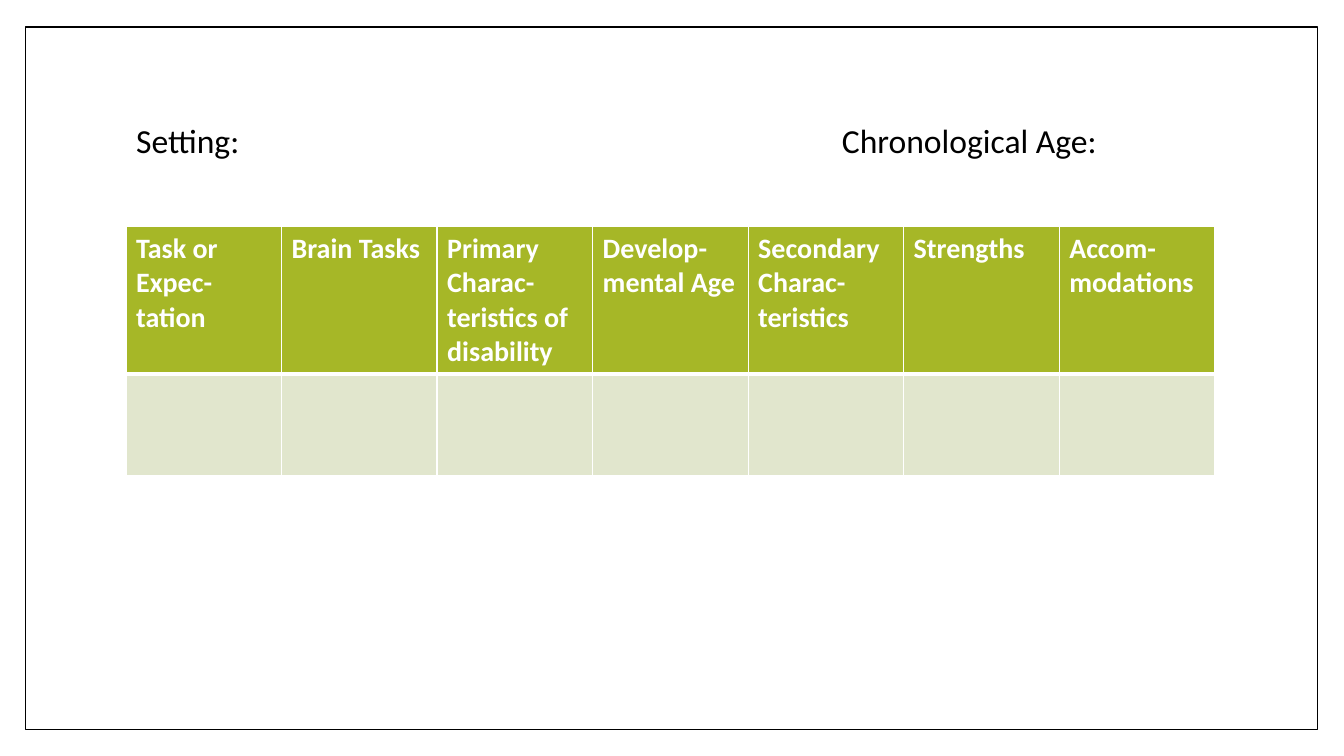
from lxml.etree import SubElement
from pptx import Presentation
from pptx.dml.color import RGBColor
from pptx.enum.shapes import MSO_SHAPE as Preset
from pptx.enum.text import MSO_ANCHOR as Anchor, PP_ALIGN as Align
from pptx.oxml import parse_xml
from pptx.oxml.ns import nsdecls, qn
from pptx.util import Inches, Pt

BLACK = RGBColor(0x00, 0x00, 0x00)
WHITE = RGBColor(0xFF, 0xFF, 0xFF)
GREEN = RGBColor(0xA6, 0xB7, 0x27)
PALE_GREEN = RGBColor(0xE1, 0xE6, 0xCD)

HEADINGS = [
    "Task or Expec-tation",
    "Brain Tasks",
    "Primary Charac-teristics of disability",
    "Develop-mental Age",
    "Secondary Charac-teristics",
    "Strengths",
    "Accom-modations",
]


def write(text_frame, text, size, color, bold=False, spacing=1.0):
    paragraph = text_frame.paragraphs[0]
    paragraph.alignment = Align.LEFT
    paragraph.line_spacing = spacing
    run = paragraph.add_run()
    run.text = text
    run.font.name = "Calibri"
    run.font.size = Pt(size)
    run.font.bold = bold
    run.font.color.rgb = color
    return paragraph


def set_borders(cell, color, **widths):
    properties = cell._tc.get_or_add_tcPr()
    for index, (side, width) in enumerate(widths.items()):
        properties.insert(index, parse_xml(
            f'<a:ln{side} {nsdecls("a")} w="{Pt(width)}"><a:solidFill>'
            f'<a:srgbClr val="{color}"/></a:solidFill></a:ln{side}>'))


class WorksheetSlide:
    left = Inches(1.25)
    width = Inches(10.8)

    def __init__(self, presentation):
        self.slide = presentation.slides.add_slide(presentation.slide_layouts[5])

    def add_title(self, text, top, height, tab_position):
        title = self.slide.shapes.title
        title.left, title.top = self.left, top
        title.width, title.height = self.width, height
        title.text_frame.vertical_anchor = Anchor.MIDDLE
        paragraph = write(title.text_frame, text, 24, BLACK, spacing=0.9)
        tabs = SubElement(paragraph._p.get_or_add_pPr(), qn("a:tabLst"))
        SubElement(tabs, qn("a:tab"), pos=str(tab_position), algn="l")

    def add_frame(self, left, top, width, height):
        frame = self.slide.shapes.add_shape(Preset.RECTANGLE, left, top, width, height)
        frame.shadow.inherit = False
        frame.fill.solid()
        frame.fill.fore_color.rgb = WHITE
        frame.line.color.rgb = BLACK
        frame.line.width = Pt(1)
        self.slide.shapes.title.element.addprevious(frame.element)

    def add_table(self, headings, top, row_heights):
        table = self.slide.shapes.add_table(
            len(row_heights), len(headings), self.left, top,
            self.width, sum(row_heights)).table
        for row, height in zip(table.rows, row_heights):
            row.height = height
        for column, heading in enumerate(headings):
            header, body = table.cell(0, column), table.cell(1, column)
            for cell, color in ((header, GREEN), (body, PALE_GREEN)):
                cell.fill.solid()
                cell.fill.fore_color.rgb = color
            write(header.text_frame, heading, 20, WHITE, bold=True)
            set_borders(header, WHITE, L=1, R=1, T=1, B=3)
            set_borders(body, WHITE, L=1, R=1, T=3, B=1)


def main():
    presentation = Presentation()
    presentation.slide_width = Inches(13.33)
    presentation.slide_height = Inches(7.5)
    worksheet = WorksheetSlide(presentation)
    worksheet.add_title("Setting:\tChronological Age:", Inches(0.67), Inches(1.48), Inches(7))
    worksheet.add_frame(Inches(0.25), Inches(0.27), Inches(12.82), Inches(6.97))
    worksheet.add_table(HEADINGS, Inches(2.25), [Inches(1.45), Inches(1.01)])
    presentation.save("out.pptx")


if __name__ == "__main__":
    main()
